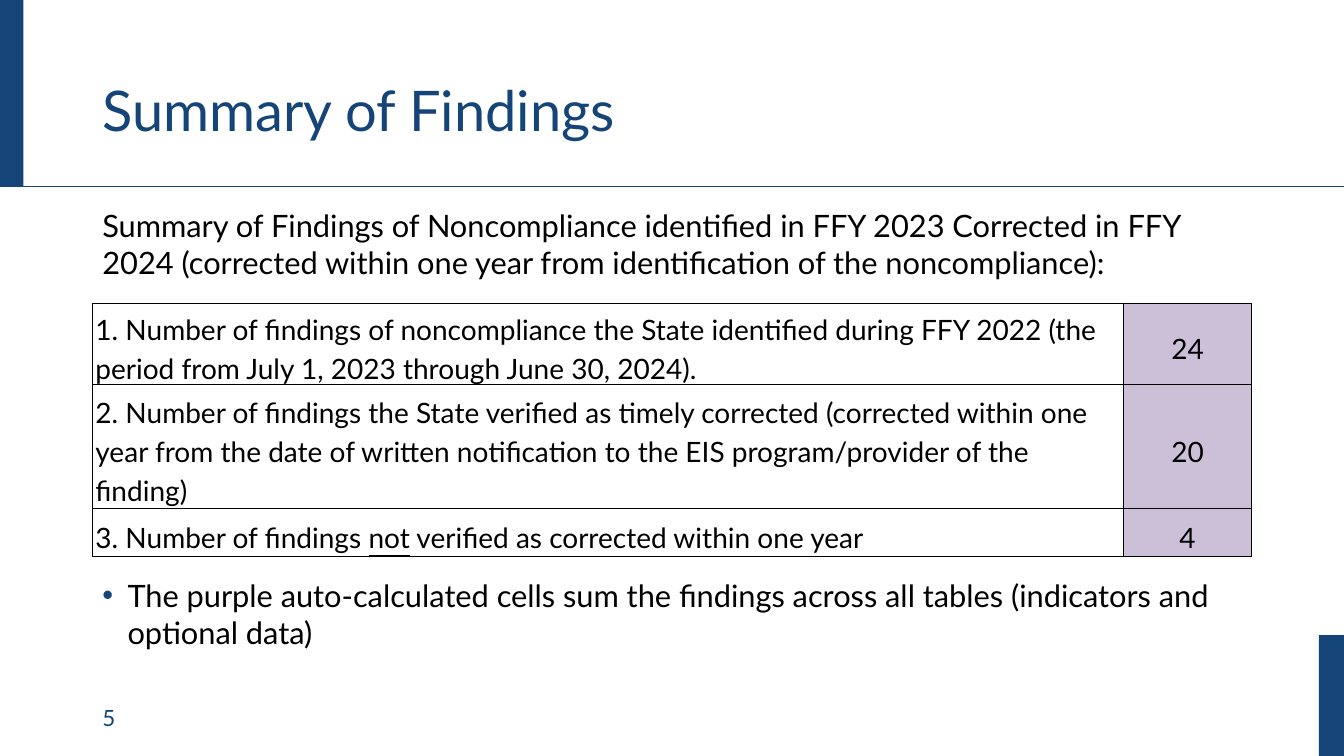
from dataclasses import dataclass

from lxml import etree
from pptx import Presentation, util as u
from pptx.dml.color import RGBColor
from pptx.enum import shapes, text
from pptx.oxml import ns

COLORS = {"navy": "154578", "black": "000000", "purple": "CCC0D9"}
FONT = "Lato"
WIDTH, HEIGHT = u.Inches(13.33), u.Inches(7.5)
COLUMNS, ROWS = 160, 150
LEFT, SPAN = 11, 138  # content margin and width, in grid columns
HEADER = 37  # header height, in grid rows


@dataclass(frozen=True)
class Area:
    """A rectangle in grid columns and rows."""
    column: float
    row: float
    columns: float
    rows: float

    def emu(self) -> tuple[int, int, int, int]:
        return across(self.column), down(self.row), across(self.columns), down(self.rows)


@dataclass(frozen=True)
class Caption:
    area: Area
    words: str
    size: int
    color: str = "navy"
    anchor: text.MSO_ANCHOR = text.MSO_ANCHOR.MIDDLE
    line_spacing: float = 1.0
    bulleted: bool = False


@dataclass(frozen=True)
class Finding:
    spans: tuple[str, ...]  # every second span is underlined
    count: int
    rows: float


BANDS = [Area(0, 0, 2.8, HEADER), Area(157, 126, 3, 24)]
CAPTIONS = [
    Caption(Area(LEFT, 138.4, 36, 8), "5", 16),
    Caption(Area(LEFT, 8, SPAN, 29), "Summary of Findings", 40, line_spacing=0.9),
    Caption(Area(LEFT, 40, SPAN, 17),
            "Summary of Findings of Noncompliance identified in FFY 2023 Corrected in FFY 2024 "
            "(corrected within one year from identification of the noncompliance):",
            22, "black", text.MSO_ANCHOR.TOP),
    Caption(Area(LEFT, 113.4, SPAN, 17),
            "The purple auto-calculated cells sum the findings across all tables "
            "(indicators and optional data)",
            22, "black", text.MSO_ANCHOR.TOP, bulleted=True),
]
FINDINGS = [
    Finding(("1. Number of findings of noncompliance the State identified during FFY 2022 "
             "(the period from July 1, 2023 through June 30, 2024).",), 24, 16),
    Finding(("2. Number of findings the State verified as timely corrected (corrected within "
             "one year from the date of written notification to the EIS program/provider "
             "of the finding)",), 20, 24.6),
    Finding(("3. Number of findings ", "not", " verified as corrected within one year"), 4, 9.4),
]
TABLE_COLUMNS = (122.75, 15.25)


def across(columns: float) -> int:
    return round(WIDTH * columns / COLUMNS)


def down(rows: float) -> int:
    return round(HEIGHT * rows / ROWS)


def rgb(name: str) -> RGBColor:
    return RGBColor.from_string(COLORS[name])


def add_element(parent, tag: str, **attributes: str):
    return etree.SubElement(parent, ns.qn(tag), attributes)


def set_font(para, size: int, color: str) -> None:
    para.font.name = FONT
    para.font.size = u.Pt(size)
    para.font.color.rgb = rgb(color)


def add_bullet(para) -> None:
    props = para._p.get_or_add_pPr()
    indent = u.Inches(0.25)
    props.set("marL", str(indent))
    props.set("indent", str(-indent))
    add_element(add_element(props, "a:buClr"), "a:srgbClr", val=COLORS["navy"])
    add_element(props, "a:buFont", typeface="Arial")
    add_element(props, "a:buChar", char="•")


def draw_band(page, area: Area) -> None:
    band = page.shapes.add_shape(shapes.MSO_SHAPE.RECTANGLE, *area.emu())
    band.shadow.inherit = False
    band.fill.solid()
    band.fill.fore_color.rgb = rgb("navy")
    band.line.fill.background()


def draw_header_rule(page) -> None:
    rule = page.shapes.add_connector(
        shapes.MSO_CONNECTOR.STRAIGHT, 0, down(HEADER), WIDTH, down(HEADER))
    rule.line.color.rgb = rgb("navy")
    rule.line.width = u.Pt(0.5)
    add_element(rule._element.spPr, "a:effectLst")


def draw_caption(page, caption: Caption) -> None:
    frame = page.shapes.add_textbox(*caption.area.emu()).text_frame
    frame.word_wrap = True
    frame.vertical_anchor = caption.anchor
    para = frame.paragraphs[0]
    para.text = caption.words
    para.line_spacing = caption.line_spacing
    if caption.bulleted:
        add_bullet(para)
    set_font(para, caption.size, caption.color)


def add_borders(cell) -> None:
    props = cell._tc.get_or_add_tcPr()
    for side in ("L", "R", "T", "B"):
        border = add_element(props, f"a:ln{side}", w=str(u.Pt(1)))
        add_element(add_element(border, "a:solidFill"), "a:srgbClr", val=COLORS["black"])


def fill_cell(cell, spans: tuple[str, ...], align: text.PP_ALIGN) -> None:
    """Set a cell's text, spacing, margins and borders."""
    cell.margin_left = cell.margin_right = u.Inches(0.03)
    cell.margin_top = cell.margin_bottom = 0
    cell.vertical_anchor = text.MSO_ANCHOR.MIDDLE
    para = cell.text_frame.paragraphs[0]
    para.alignment = align
    para.line_spacing = 1.15
    para.space_before, para.space_after = u.Pt(0), u.Pt(3)
    cell.margin_top = u.Pt(3)
    for index, words in enumerate(spans):
        span = para.add_run()
        span.text = words
        if index % 2:
            span.font.underline = True
    set_font(para, 20, "black")
    add_borders(cell)


def draw_findings(page) -> None:
    area = Area(LEFT, 60.2, SPAN, sum(finding.rows for finding in FINDINGS))
    table = page.shapes.add_table(len(FINDINGS), len(TABLE_COLUMNS), *area.emu()).table
    table.first_row = table.horz_banding = False
    for column, columns in zip(table.columns, TABLE_COLUMNS):
        column.width = across(columns)
    for row, finding in zip(table.rows, FINDINGS):
        row.height = down(finding.rows)
        label, count = row.cells
        fill_cell(label, finding.spans, text.PP_ALIGN.LEFT)
        label.fill.background()
        fill_cell(count, (str(finding.count),), text.PP_ALIGN.CENTER)
        count.fill.solid()
        count.fill.fore_color.rgb = rgb("purple")


def main() -> None:
    deck = Presentation()
    deck.slide_width, deck.slide_height = WIDTH, HEIGHT
    page = deck.slides.add_slide(deck.slide_layouts[6])
    for band in BANDS:
        draw_band(page, band)
    draw_header_rule(page)
    for caption in CAPTIONS:
        draw_caption(page, caption)
    draw_findings(page)
    deck.save("out.pptx")


if __name__ == "__main__":
    main()
